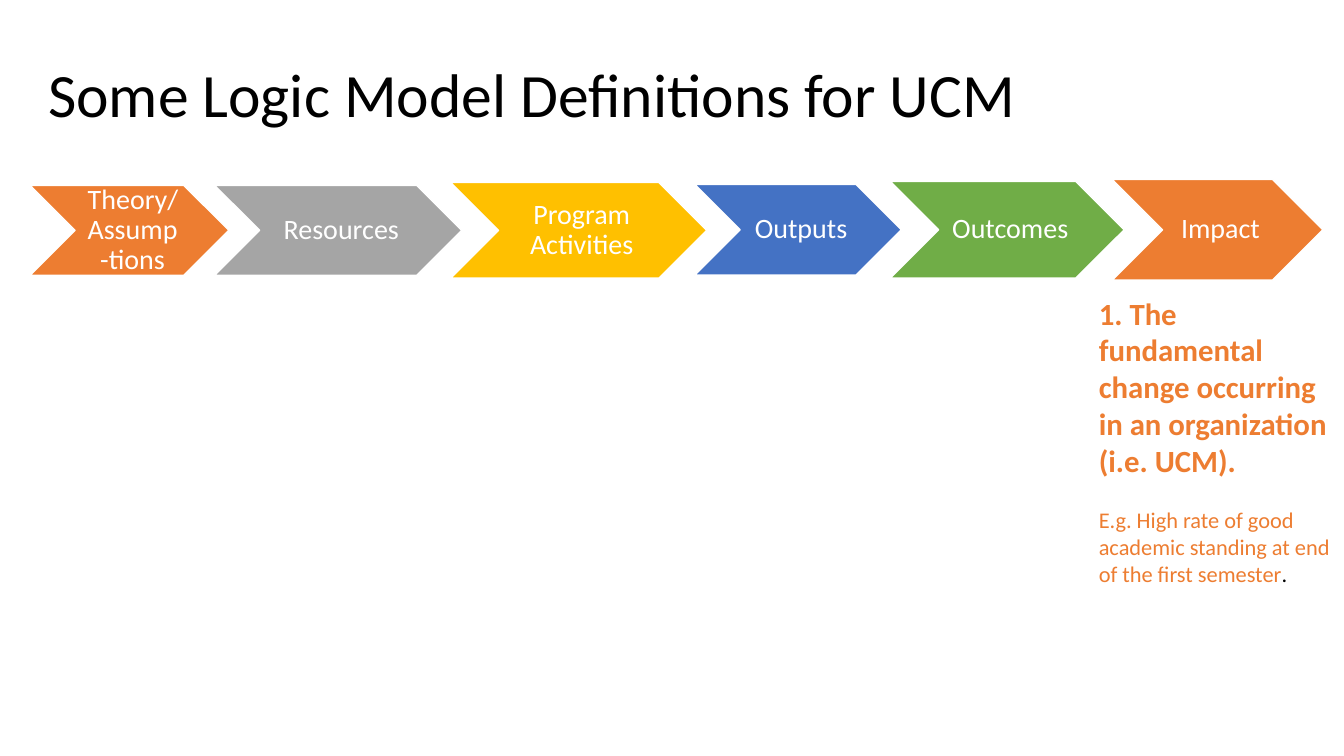
from dataclasses import dataclass

from pptx import Presentation
from pptx.dml.color import RGBColor
from pptx.enum.shapes import MSO_SHAPE
from pptx.enum.text import MSO_ANCHOR, PP_ALIGN
from pptx.util import Emu, Pt

PX = 9144  # EMU per px, 100 px to the inch
FONT = "Calibri"
COLORS = {
    "orange": "ED7D31",
    "gray": "A5A5A5",
    "gold": "FFC000",
    "blue": "4472C4",
    "green": "70AD47",
    "white": "FFFFFF",
    "black": "000000",
}
CHEVRON_MIDDLE = 228


@dataclass
class Stage:
    label: str
    left: int
    width: int
    height: int
    color: str


STAGES = [
    Stage("Theory/Assump-tions", 30, 197, 89, "orange"),
    Stage("Resources", 213, 245, 89, "gray"),
    Stage("Program Activities", 447, 254, 95, "gold"),
    Stage("Outputs", 689, 205, 90, "blue"),
    Stage("Outcomes", 883, 232, 96, "green"),
    Stage("Impact", 1103, 209, 100, "orange"),
]


def px(n: int) -> Emu:
    return Emu(n * PX)


def rgb(name: str) -> RGBColor:
    return RGBColor.from_string(COLORS[name])


def style(font, size: int, color: str, bold: bool = False) -> None:
    font.name = FONT
    font.size = Pt(size)
    font.bold = bold
    font.color.rgb = rgb(color)


def add_text_frame(s, left: int, top: int, width: int, height: int):
    tf = s.shapes.add_textbox(px(left), px(top), px(width), px(height)).text_frame
    tf.word_wrap = True
    return tf


def add_chevron(s, stage: Stage) -> None:
    top = CHEVRON_MIDDLE - stage.height // 2
    sp = s.shapes.add_shape(MSO_SHAPE.CHEVRON, px(stage.left), px(top),
                            px(stage.width), px(stage.height))
    sp.shadow.inherit = False
    sp.fill.solid()
    sp.fill.fore_color.rgb = rgb(stage.color)
    sp.line.color.rgb = rgb("white")
    sp.line.width = Pt(1)
    tf = sp.text_frame
    tf.word_wrap = True
    tf.vertical_anchor = MSO_ANCHOR.MIDDLE
    tf.margin_left = px(9)
    tf.margin_top = tf.margin_right = tf.margin_bottom = px(3)
    p = tf.paragraphs[0]
    p.text = stage.label
    p.alignment = PP_ALIGN.CENTER
    p.line_spacing = 0.9
    style(p.font, 20, "white")


def add_title(s) -> None:
    tf = add_text_frame(s, 38, 24, 1150, 145)
    tf.vertical_anchor = MSO_ANCHOR.MIDDLE
    p = tf.paragraphs[0]
    p.text = "Some Logic Model Definitions for UCM"
    p.line_spacing = 0.9
    style(p.font, 44, "black")


def add_impact_definition(s) -> None:
    tf = add_text_frame(s, 1080, 287, 263, 303)
    p = tf.paragraphs[0]
    p.text = "1. The fundamental change occurring in an organization (i.e. UCM)."
    style(p.font, 22, "orange", bold=True)

    p = tf.add_paragraph()
    p.space_before = Pt(19.5)
    style(p.font, 16, "orange")
    p.add_run().text = "E.g. High rate of good academic standing at end of the first semester"
    r = p.add_run()
    r.text = "."
    r.font.color.rgb = rgb("black")


def main() -> None:
    prs = Presentation()
    prs.slide_width, prs.slide_height = px(1333), px(750)
    s = prs.slides.add_slide(prs.slide_layouts[6])

    # Chain of stages
    for stage in STAGES:
        add_chevron(s, stage)

    # Title and definition
    add_title(s)
    add_impact_definition(s)
    prs.save("out.pptx")


if __name__ == "__main__":
    main()
